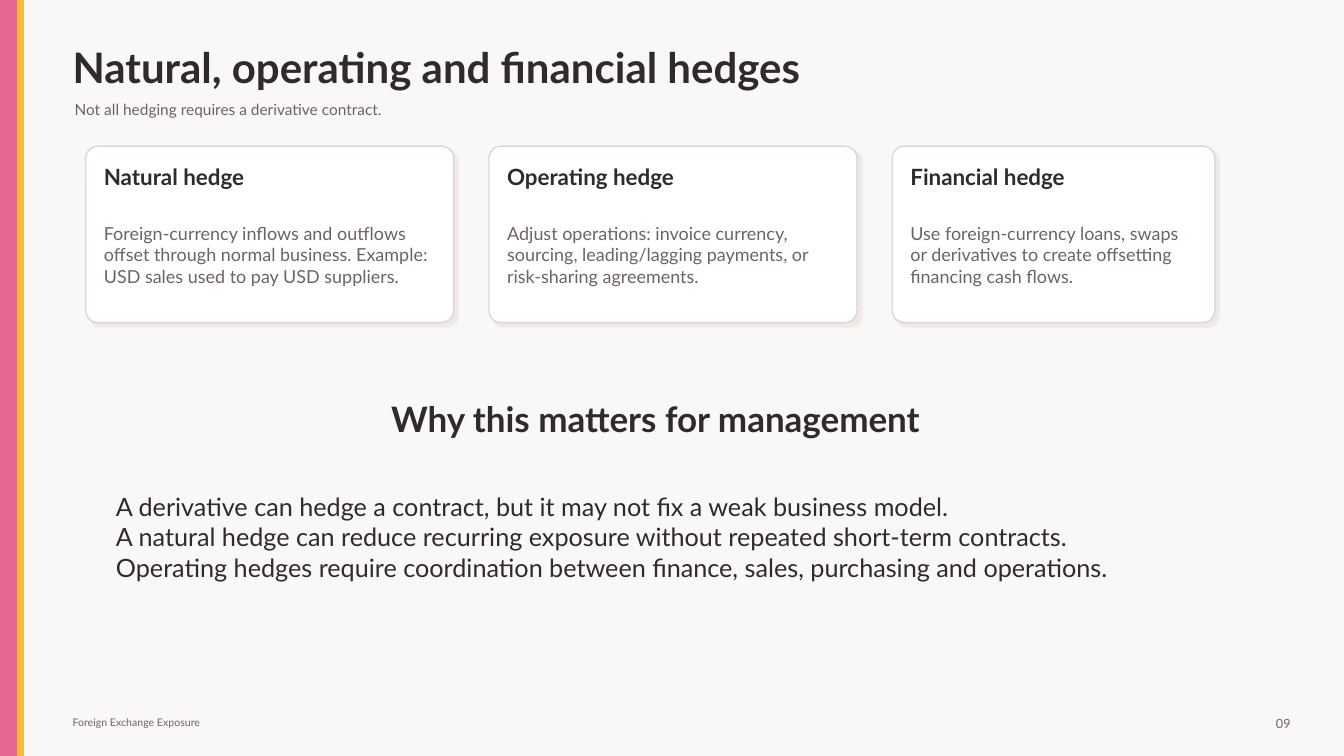
"""Builds the slide on natural, operating and financial hedges."""
from dataclasses import dataclass

from lxml import etree
from pptx import Presentation
from pptx.dml.color import RGBColor
from pptx.enum.shapes import MSO_SHAPE
from pptx.enum.text import MSO_ANCHOR, MSO_AUTO_SIZE, PP_ALIGN
from pptx.oxml.ns import qn
from pptx.util import Emu, Pt

RECTANGLE = MSO_SHAPE.RECTANGLE
ROUNDED = MSO_SHAPE.ROUNDED_RECTANGLE
MIDDLE = MSO_ANCHOR.MIDDLE
NO_FIT = MSO_AUTO_SIZE.NONE
LEFT, CENTER, RIGHT = PP_ALIGN.LEFT, PP_ALIGN.CENTER, PP_ALIGN.RIGHT

PX_PER_INCH = 100
FONT = "Lato"
COLORS = {
    "page": "FAF8F6",
    "pink": "E46791",
    "amber": "FAB938",
    "ink": "2F2A2D",
    "muted": "6D6264",
    "card": "FFFFFF",
    "border": "D8CCD0",
    "shadow": "B8ADA8",
}
CARD_LEFT, CARD_TOP, CARD_HEIGHT, CARD_STEP, CARD_PAD = 85, 145, 175, 400, 18


@dataclass(frozen=True)
class Bar:
    left: int
    width: int
    color: str


@dataclass(frozen=True)
class Card:
    heading: str
    text: str
    width: int


BARS = [Bar(0, 18, "pink"), Bar(18, 5, "amber")]
CARDS = [
    Card("Natural hedge",
         "Foreign-currency inflows and outflows offset through normal business. "
         "Example: USD sales used to pay USD suppliers.", 365),
    Card("Operating hedge",
         "Adjust operations: invoice currency, sourcing, leading/lagging payments, "
         "or risk-sharing agreements.", 365),
    Card("Financial hedge",
         "Use foreign-currency loans, swaps or derivatives to create offsetting "
         "financing cash flows.", 320),
]
REASONS = [
    "A derivative can hedge a contract, but it may not fix a weak business model.",
    "A natural hedge can reduce recurring exposure without repeated short-term contracts.",
    "Operating hedges require coordination between finance, sales, purchasing and operations.",
]


def px(length: int) -> Emu:
    return Emu(length * 914400 // PX_PER_INCH)


def rgb(name: str) -> RGBColor:
    return RGBColor.from_string(COLORS[name])


def write(box, *lines: str, at: tuple, size: float, color: str = "ink",
          bold: bool = False, align=LEFT) -> None:
    box.left, box.top, box.width, box.height = map(px, at)
    frame = box.text_frame
    frame.word_wrap = True
    frame.auto_size = NO_FIT
    frame.vertical_anchor = MIDDLE
    frame.margin_left = frame.margin_top = frame.margin_right = frame.margin_bottom = 0
    for index, line in enumerate(lines):
        para = frame.add_paragraph() if index else frame.paragraphs[0]
        para.alignment = align
        para.space_before = Pt(0)
        if box.is_placeholder:
            properties = para._p.get_or_add_pPr()
            properties.set("marL", "0")
            properties.set("indent", "0")
            etree.SubElement(properties, qn("a:buNone"))
        span = para.add_run()
        span.text = line
        span.font.name = FONT
        span.font.size = Pt(size)
        span.font.bold = bold
        span.font.color.rgb = rgb(color)


def add_text(page, *lines: str, at: tuple, **style) -> None:
    write(page.shapes.add_textbox(0, 0, 0, 0), *lines, at=at, **style)


def add_block(page, kind, at: tuple, fill: str, line: str):
    block = page.shapes.add_shape(kind, *map(px, at))
    block.fill.solid()
    block.fill.fore_color.rgb = rgb(fill)
    block.line.color.rgb = rgb(line)
    block.line.width = Pt(1)
    block.shadow.inherit = False
    return block


def set_opacity(color, percent: int) -> None:
    etree.SubElement(color, qn("a:alpha"), val=str(percent * 1000))


def add_card(page, card: Card, left: int) -> None:
    panel = add_block(page, ROUNDED, (left, CARD_TOP, card.width, CARD_HEIGHT),
                      "card", "border")
    panel.adjustments[0] = 0.069
    properties = panel._element.spPr
    set_opacity(properties.find(qn("a:ln")).find(".//" + qn("a:srgbClr")), 80)
    shadow = etree.SubElement(properties.find(qn("a:effectLst")), qn("a:outerShdw"),
                              blurRad=str(Pt(1)), dist=str(Pt(4)),
                              dir=str(45 * 60000), algn="ctr", rotWithShape="0")
    set_opacity(etree.SubElement(shadow, qn("a:srgbClr"), val=COLORS["shadow"]), 18)
    inner_left, inner_width = left + CARD_PAD, card.width - 2 * CARD_PAD
    add_text(page, card.heading, at=(inner_left, CARD_TOP + 16, inner_width, 28),
             size=16, bold=True)
    add_text(page, card.text, at=(inner_left, CARD_TOP + 55, inner_width, 105),
             size=12.8, color="muted")


def main() -> None:
    deck = Presentation()
    deck.slide_width, deck.slide_height = px(1333), px(750)
    page = deck.slides.add_slide(deck.slide_layouts[1])
    page.background.fill.solid()
    page.background.fill.fore_color.rgb = rgb("page")

    title, body = page.placeholders
    write(title, "Natural, operating and financial hedges",
          at=(72, 42, 1190, 48), size=30, bold=True)
    write(body, *REASONS, at=(115, 455, 1090, 155), size=18)

    for bar in BARS:
        add_block(page, RECTANGLE, (bar.left, 0, bar.width, 750), bar.color, bar.color)
    add_text(page, "Not all hedging requires a derivative contract.",
             at=(74, 94, 1140, 28), size=11, color="muted")
    for index, card in enumerate(CARDS):
        add_card(page, card, CARD_LEFT + index * CARD_STEP)
    add_text(page, "Why this matters for management",
             at=(100, 395, 1100, 40), size=25, bold=True, align=CENTER)
    add_text(page, "Foreign Exchange Exposure",
             at=(72, 708, 350, 18), size=7.5, color="muted")
    add_text(page, "09", at=(1245, 705, 35, 25), size=9, color="muted", align=RIGHT)
    deck.save("out.pptx")


if __name__ == "__main__":
    main()
